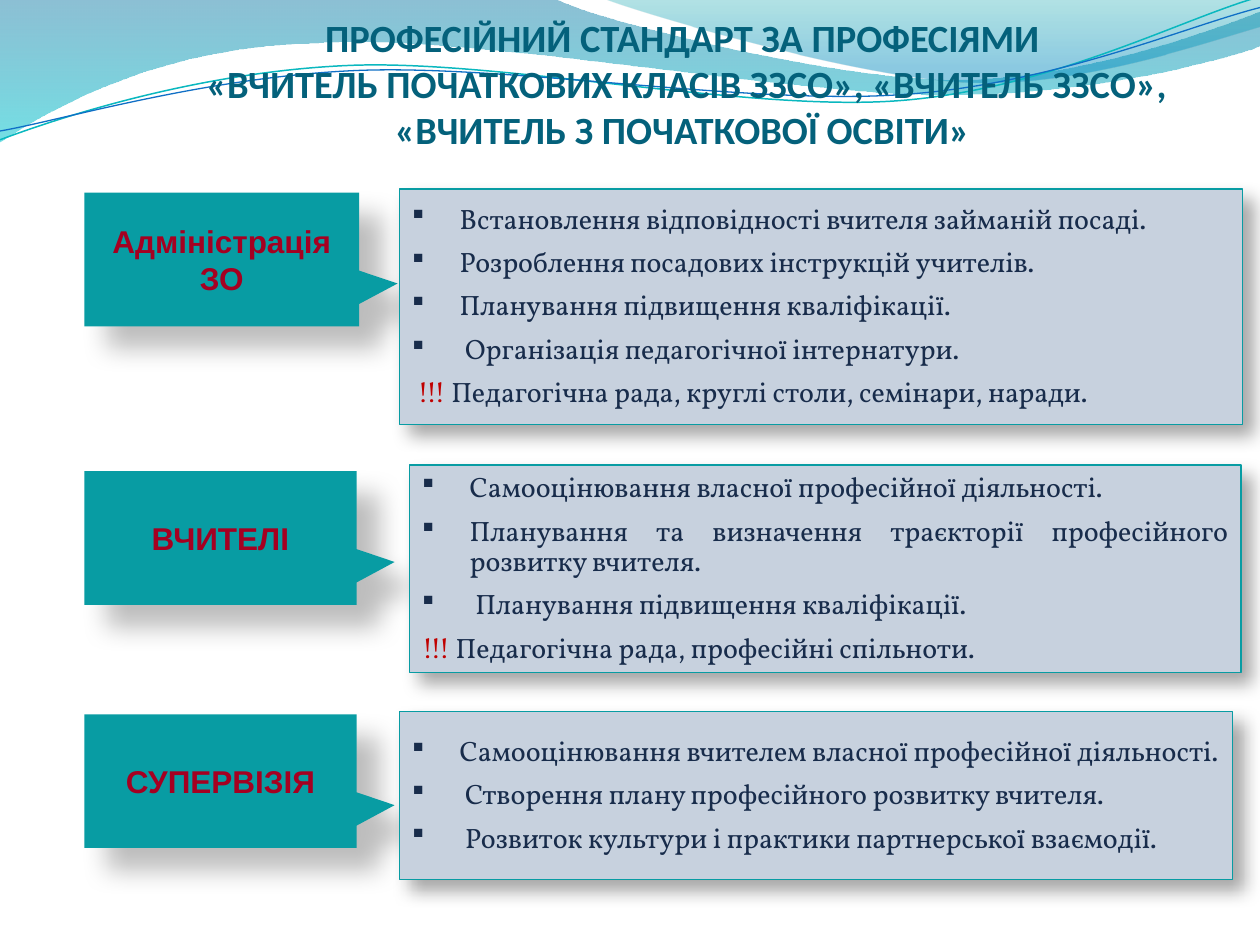
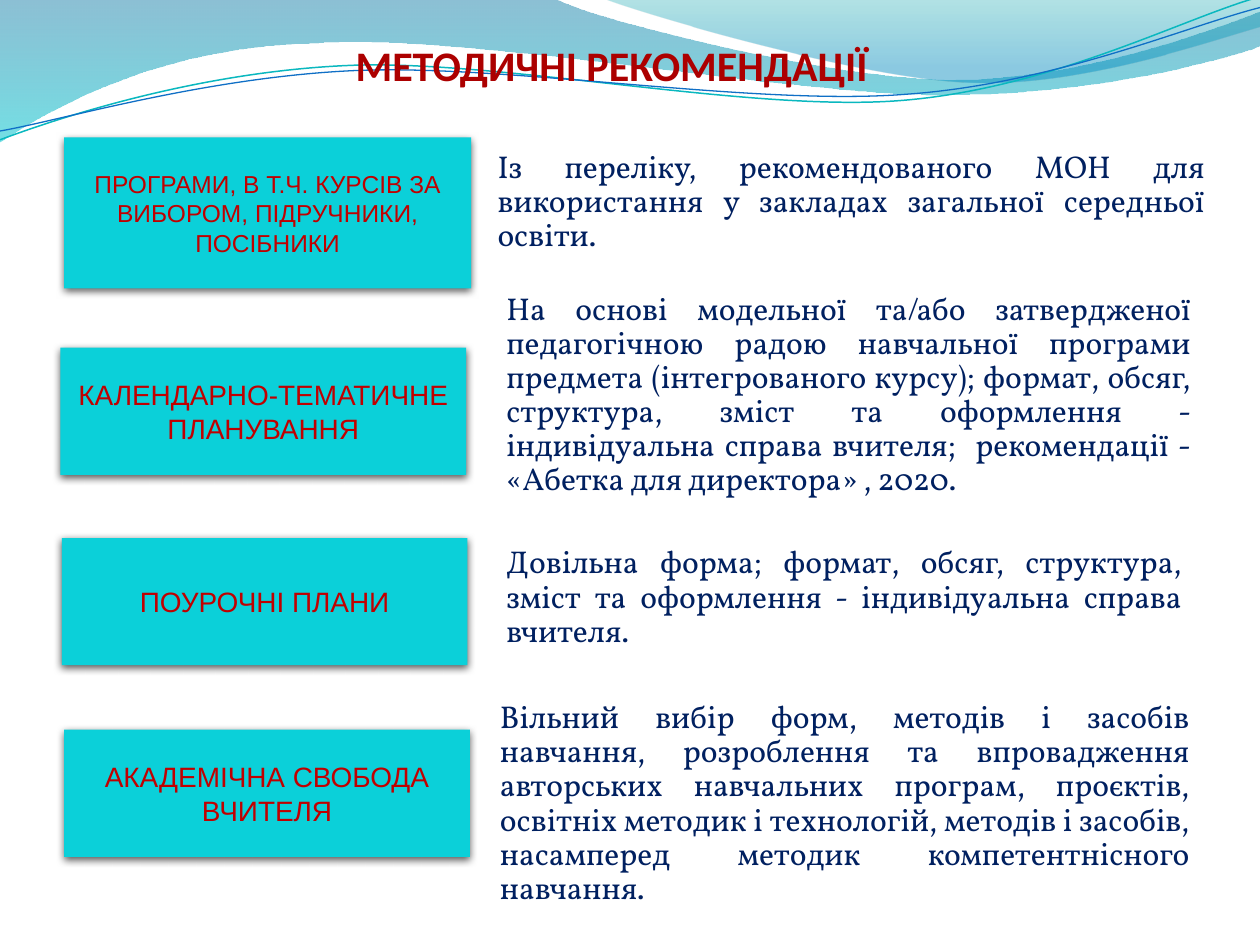
"""Builds two slides on the teachers' professional standard and methodical advice."""
from lxml.etree import SubElement
from pptx import Presentation
from pptx.dml.color import RGBColor
from pptx.enum.shapes import MSO_SHAPE as Preset
from pptx.enum.text import MSO_ANCHOR as Anchor, MSO_AUTO_SIZE as AutoSize, PP_ALIGN as Align
from pptx.oxml.ns import qn
from pptx.util import Inches, Pt

COLOURS = {
    "title": "04617B", "heading": "AC0000", "callout": "089CA3", "callout_text": "A50021",
    "panel": "C7D1DE", "panel_text": "182C4B", "alert": "C00000", "label": "0BD0D9",
    "advice": "002060", "shadow": "000000", "line_teal": "0AB8BF", "line_blue": "0F6FC6",
    "wave_top": "0074A1", "wave_low": "00C6CF", "crest_top": "00A1A9", "crest_low": "008BBF",
}
ALERT = "!!! "

STANDARD_TITLE = [
    "ПРОФЕСІЙНИЙ СТАНДАРТ ЗА ПРОФЕСІЯМИ ",
    "«ВЧИТЕЛЬ ПОЧАТКОВИХ КЛАСІВ ЗЗСО», «ВЧИТЕЛЬ ЗЗСО», «ВЧИТЕЛЬ З ПОЧАТКОВОЇ ОСВІТИ» ",
]
STANDARD_ROWS = [
    ("Адміністрація ЗО", (0.67, 1.53, 2.18, 1.06), (3.17, 1.5, 6.69, 1.87), [
        "Встановлення відповідності вчителя займаній посаді. ",
        "Розроблення посадових інструкцій учителів.",
        "Планування підвищення кваліфікації.",
        " Організація педагогічної інтернатури.",
        " !!! Педагогічна рада, круглі столи, семінари, наради.",
    ]),
    ("ВЧИТЕЛІ", (0.67, 3.74, 2.16, 1.06), (3.25, 3.69, 6.6, 1.65), [
        "Самооцінювання власної професійної діяльності.",
        "Планування та визначення траєкторії професійного розвитку вчителя.",
        " Планування підвищення кваліфікації.",
        "!!! Педагогічна рада, професійні спільноти.",
    ]),
    ("СУПЕРВІЗІЯ", (0.67, 5.67, 2.16, 1.06), (3.17, 5.65, 6.61, 1.33), [
        "Самооцінювання вчителем власної професійної діяльності.",
        " Створення плану професійного розвитку вчителя.",
        " Розвиток культури і практики партнерської взаємодії.",
    ]),
]
ADVICE_TITLE = ["МЕТОДИЧНІ РЕКОМЕНДАЦІЇ"]
ADVICE_ROWS = [
    ("ПРОГРАМИ, В Т.Ч. КУРСІВ ЗА ВИБОРОМ, ПІДРУЧНИКИ, ПОСІБНИКИ", 14,
     (0.51, 1.09, 3.23, 1.2), (3.85, 1.15, 5.81, 0.92),
     "Із переліку, рекомендованого МОН для використання у закладах загальної середньої освіти."),
    ("КАЛЕНДАРНО-ТЕМАТИЧНЕ ПЛАНУВАННЯ", 16,
     (0.48, 2.76, 3.22, 1.01), (3.92, 2.28, 5.63, 1.74),
     "На основі модельної та/або затвердженої педагогічною радою навчальної програми предмета "
     "(інтегрованого курсу); формат, обсяг, структура, зміст та оформлення - індивідуальна "
     "справа вчителя;  рекомендації - «Абетка для директора» , 2020."),
    ("ПОУРОЧНІ ПЛАНИ", 16, (0.49, 4.27, 3.22, 1.01), (3.92, 4.29, 5.56, 0.92),
     "Довільна форма; формат, обсяг, структура, зміст та оформлення - індивідуальна справа вчителя."),
    ("АКАДЕМІЧНА СВОБОДА ВЧИТЕЛЯ", 16, (0.51, 5.79, 3.22, 1.01), (3.87, 5.52, 5.67, 1.74),
     "Вільний вибір форм, методів і засобів навчання, розроблення та впровадження авторських "
     "навчальних програм, проєктів, освітніх методик і технологій, методів і засобів, "
     "насамперед методик компетентнісного навчання."),
]

BANDS = [
    ([(0, 0), (4.4, -0.01), (4.76, 0.17, 6.64, 0.63, 7.58, 0.63),
      (8.53, 0.63, 9.58, 0.26, 10, 0.09), (10.01, 0.36), (9.83, 0.44, 8.7, 0.76, 7.46, 0.75),
      (6.22, 0.75, 3.82, 0.28, 2.57, 0.34), (1.29, 0.36, 0.46, 0.83, -0.01, 1.13)],
     [(0, "wave_top", 45), (1, "wave_low", 55)]),
    ([(4.79, -0.01), (5.09, 0.11, 6.82, 0.62, 7.69, 0.65),
      (8.56, 0.69, 9.61, 0.32, 10, 0.21), (10, 0)],
     [(0, "crest_top", 30), (0.8, "crest_low", 45)]),
]
STRANDS = [
    ([(0, 1.11), (0.48, 0.93, 1.58, 0.57, 2.77, 0.52), (3.95, 0.47, 5.93, 0.89, 7.13, 0.8),
      (8.33, 0.71, 9.38, 0.15, 9.98, -0.02)], "line_teal", 0.85),
    ([(0, 1.04), (0.47, 0.96, 1.64, 0.61, 2.83, 0.56), (4.03, 0.51, 5.97, 0.84, 7.17, 0.75),
      (8.36, 0.67, 9.41, 0.21, 10, 0.06)], "line_blue", 0.75),
]
CALLOUT_SHADOW = {"alpha": 26, "blur": 15, "distance": 18, "angle": 45}
PANEL_SHADOW = {"alpha": 35, "blur": 10.2, "distance": 8, "angle": 45}
LABEL_SHADOW = {"alpha": 63, "blur": 4.5, "distance": 1.5, "angle": 90}


def colour(name):
    return RGBColor.from_string(COLOURS[name])


def write(frame, lines, font, size, ink, bold=False, align=Align.CENTER, anchor=Anchor.MIDDLE,
          spacing=None, before=None, bullets=False, wrap=True):
    frame.auto_size = AutoSize.NONE
    frame.word_wrap = wrap
    frame.vertical_anchor = anchor
    for index, line in enumerate(lines):
        para = frame.paragraphs[0] if index == 0 else frame.add_paragraph()
        para.alignment = align
        if spacing:
            para.line_spacing = spacing
        if before:
            para.space_before = Pt(before)
        if bullets and ALERT not in line:
            properties = para._p.get_or_add_pPr()
            properties.set("marL", str(Inches(0.38)))
            properties.set("indent", str(-Inches(0.38)))
            SubElement(properties, qn("a:buFont"), typeface="Wingdings", charset="2")
            SubElement(properties, qn("a:buChar"), char="§")
        for text in filter(None, line.partition(ALERT)):
            span = para.add_run()
            span.text = text
            span.font.name, span.font.size, span.font.bold = font, Pt(size), bold
            span.font.color.rgb = colour("alert" if text == ALERT else ink)


def place(shape, area):
    shape.left, shape.top, shape.width, shape.height = map(Inches, area)


def add_box(slide, preset, area, fill, shadow, border=None):
    box = slide.shapes.add_shape(preset, *map(Inches, area))
    box.fill.solid()
    box.fill.fore_color.rgb = colour(fill)
    if border:
        box.line.color.rgb = colour(border)
        box.line.width = Pt(0.75)
    else:
        box.line.fill.background()
    box.shadow.inherit = False
    effects = box.element.spPr.find(qn("a:effectLst"))
    outer = SubElement(effects, qn("a:outerShdw"), blurRad=str(Pt(shadow["blur"])),
                       dist=str(Pt(shadow["distance"])), dir=str(shadow["angle"] * 60000),
                       algn="tl", rotWithShape="0")
    tint = SubElement(outer, qn("a:srgbClr"), val=COLOURS["shadow"])
    SubElement(tint, qn("a:alpha"), val=str(shadow["alpha"] * 1000))
    return box


def draw_outline(slide, steps, close):
    start, *ends = [tuple(map(Inches, step[-2:])) for step in steps]
    builder = slide.shapes.build_freeform(*start)
    builder.add_line_segments(ends, close=False)
    outline = builder.convert_to_shape()
    outline.shadow.inherit = False
    track = next(outline.element.iter(qn("a:lnTo"))).getparent()
    for segment, step in zip(track.findall(qn("a:lnTo")), steps[1:]):
        if len(step) == 6:
            segment.tag = qn("a:cubicBezTo")
            segment.clear()
            for x, y in zip(step[::2], step[1::2]):
                SubElement(segment, qn("a:pt"), x=str(Inches(x) - outline.left),
                           y=str(Inches(y) - outline.top))
    if close:
        SubElement(track, qn("a:close"))
    return outline


def move_waves_to_layout(slide):
    waves = []
    for steps, stops in BANDS:
        band = draw_outline(slide, steps, True)
        band.line.fill.background()
        band.fill.gradient()
        band.fill.gradient_angle = 270
        for stop, (position, name, _) in zip(band.fill.gradient_stops, stops):
            stop.position = position
            stop.color.rgb = colour(name)
        for tint, (_, _, alpha) in zip(band.element.spPr.iter(qn("a:srgbClr")), stops):
            SubElement(tint, qn("a:alpha"), val=str(alpha * 1000))
        waves.append(band)
    for steps, name, width in STRANDS:
        strand = draw_outline(slide, steps, False)
        strand.fill.background()
        strand.line.color.rgb = colour(name)
        strand.line.width = Pt(width)
        waves.append(strand)
    for wave in waves:
        slide.slide_layout.shapes.element.append(wave.element)


def add_page(deck, title, area, **style):
    page = deck.slides.add_slide(deck.slide_layouts[5])
    place(page.shapes.title, area)
    write(page.shapes.title.text_frame, title, "Calibri", bold=True, anchor=Anchor.TOP, **style)
    return page


def build_standard(deck):
    page = add_page(deck, STANDARD_TITLE, (0.94, 0.06, 9.02, 1.21), size=22, ink="title")
    move_waves_to_layout(page)
    for role, callout_area, panel_area, duties in STANDARD_ROWS:
        callout = add_box(page, Preset.RECTANGULAR_CALLOUT, callout_area, "callout", CALLOUT_SHADOW)
        callout.adjustments[0], callout.adjustments[1] = 0.64, 0.18
        write(callout.text_frame, [role], "Arial", 18, "callout_text", bold=True)
        panel = add_box(page, Preset.RECTANGLE, panel_area, "panel", PANEL_SHADOW, "callout")
        write(panel.text_frame, duties, "Vollkorn", 16, "panel_text", align=Align.JUSTIFY,
              spacing=0.9, before=7.5, bullets=True)


def build_advice(deck):
    page = add_page(deck, ADVICE_TITLE, (2.63, 0.26, 4.45, 0.51), size=24, ink="heading", wrap=False)
    for topic, size, label_area, text_area, advice in ADVICE_ROWS:
        label = add_box(page, Preset.RECTANGLE, label_area, "label", LABEL_SHADOW)
        write(label.text_frame, [topic], "Arial", size, "alert")
        box = page.shapes.add_textbox(*map(Inches, text_area))
        write(box.text_frame, [advice], "Vollkorn", 18, "advice", align=Align.JUSTIFY,
              anchor=Anchor.TOP, spacing=0.9)


def main():
    deck = Presentation()
    deck.slide_width, deck.slide_height = Inches(10), Inches(7.5)
    build_standard(deck)
    build_advice(deck)
    deck.save("out.pptx")


if __name__ == "__main__":
    main()
